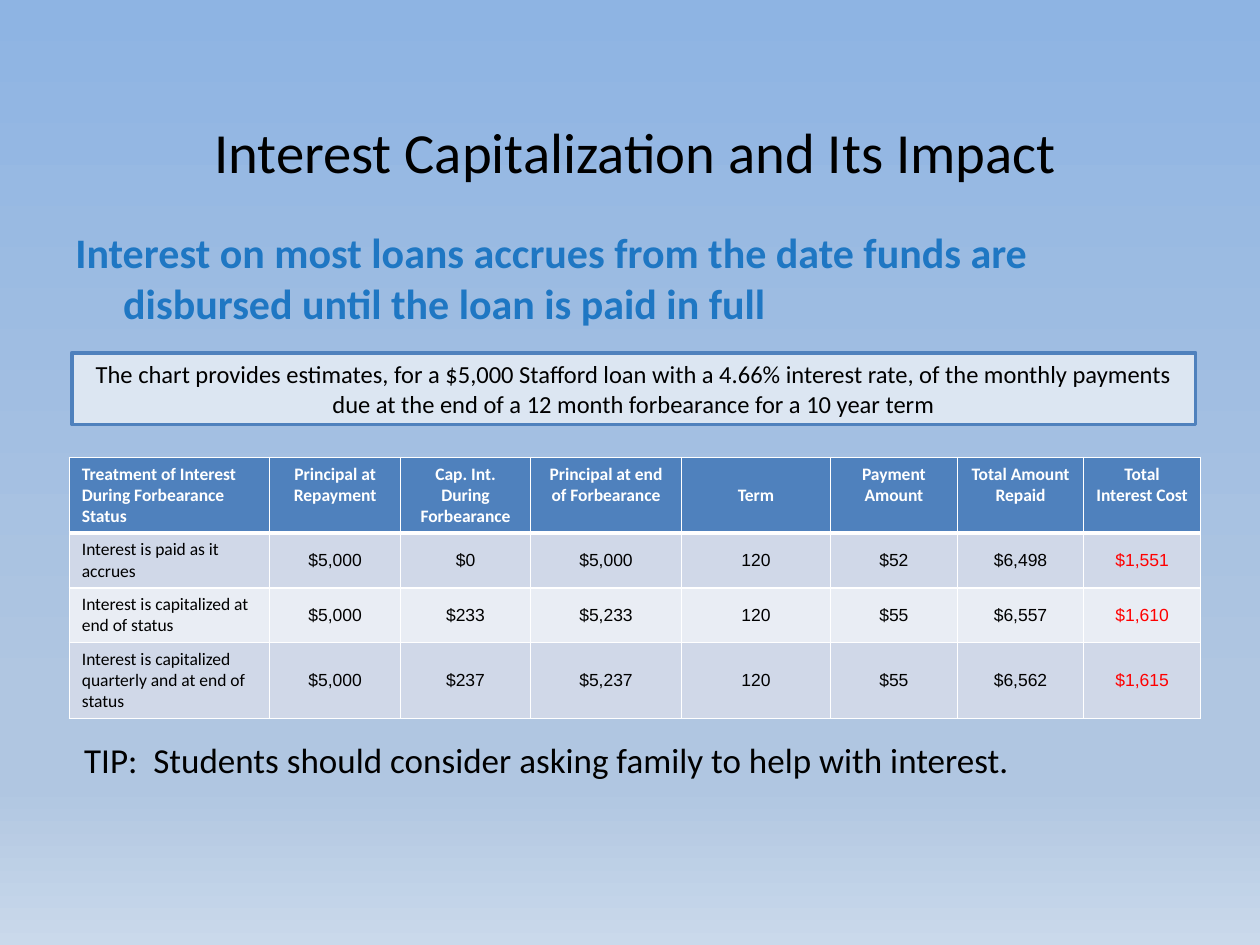
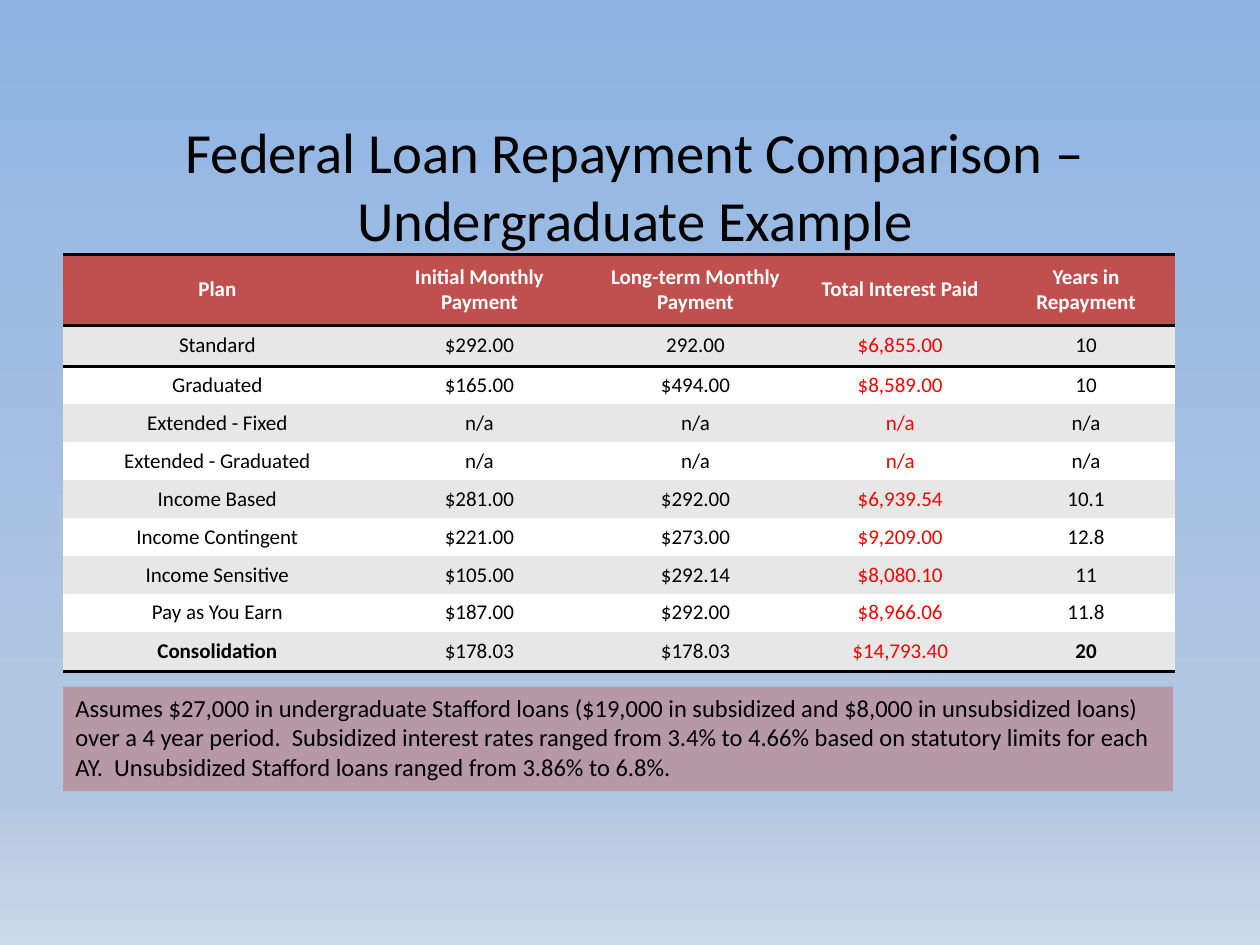
from lxml import etree
from pptx import Presentation
from pptx.dml.color import RGBColor
from pptx.enum.shapes import MSO_SHAPE
from pptx.enum.text import MSO_ANCHOR, PP_ALIGN
from pptx.oxml.ns import qn
from pptx.util import Emu, Inches, Pt

RECT = MSO_SHAPE.RECTANGLE
TOP, MID = MSO_ANCHOR.TOP, MSO_ANCHOR.MIDDLE
LEFT, MIDDLE = PP_ALIGN.LEFT, PP_ALIGN.CENTER
WIDE, HIGH = 10, 7.5
PLAIN = "{2D5ABB26-0587-4C30-8999-92F81FD0307C}"
BLACK, WHITE, RED = "000000", "FFFFFF", "FF0000"
BLUE, PALE, BRICK, HEAD = "4F81BD", "DCE6F2", "C0504D", "1F77C3"
SKY = [(0, "8EB4E3"), (74, "B0C6E1"), (83, "B0C6E1"), (100, "CAD9EB")]

IMPACT = dict(
    title="Interest Capitalization and Its Impact",
    lead="Interest on most loans accrues from the date funds are disbursed until the loan is paid in full",
    note="The chart provides estimates, for a $5,000 Stafford loan with a 4.66% interest rate, of the "
         "monthly payments due at the end of a 12 month forbearance for a 10 year term",
    tip="TIP:  Students should consider asking family to help with interest.",
    cols=[1.59, 1.04, 1.03, 1.2, 1.18, 1.01, 1, 0.93],
    rows=[0.59, 0.43, 0.43, 0.6],
    cells=[
        ["Treatment of Interest During Forbearance Status", "Principal at Repayment",
         "Cap. Int. During Forbearance", "Principal at end of Forbearance", "Term",
         "Payment Amount", "Total Amount Repaid", "Total Interest Cost"],
        ["Interest is paid as it accrues", "$5,000", "$0", "$5,000", "120", "$52", "$6,498", "$1,551"],
        ["Interest is capitalized at end of status",
         "$5,000", "$233", "$5,233", "120", "$55", "$6,557", "$1,610"],
        ["Interest is capitalized quarterly and at end of status",
         "$5,000", "$237", "$5,237", "120", "$55", "$6,562", "$1,615"],
    ],
)
PLANS = dict(
    title="Federal Loan Repayment Comparison – Undergraduate Example",
    note="Assumes $27,000 in undergraduate Stafford loans ($19,000 in subsidized and $8,000 in "
         "unsubsidized loans) over a 4 year period.  Subsidized interest rates ranged from 3.4% to 4.66% "
         "based on statutory limits for each AY.  Unsubsidized Stafford loans ranged from 3.86% to 6.8%.",
    cols=[2.45, 1.71, 1.72, 1.53, 1.42],
    rows=[0.56, 0.33] + [0.3] * 7 + [0.32],
    cells=[
        ["Plan", "Initial Monthly Payment", "Long-term Monthly Payment",
         "Total Interest Paid", "Years in Repayment"],
        ["Standard", "$292.00", "292.00", "$6,855.00", "10"],
        ["Graduated", "$165.00", "$494.00", "$8,589.00", "10"],
        ["Extended - Fixed", "n/a", "n/a", "n/a", "n/a"],
        ["Extended - Graduated", "n/a", "n/a", "n/a", "n/a"],
        ["Income Based", "$281.00", "$292.00", "$6,939.54", "10.1"],
        ["Income Contingent", "$221.00", "$273.00", "$9,209.00", "12.8"],
        ["Income Sensitive", "$105.00", "$292.14", "$8,080.10", "11"],
        ["Pay as You Earn", "$187.00", "$292.00", "$8,966.06", "11.8"],
        ["Consolidation", "$178.03", "$178.03", "$14,793.40", "20"],
    ],
)


def tint(text):
    return RGBColor.from_string(text)


def write(frame, text, size, color=BLACK, bold=False, align=LEFT, face="Calibri"):
    para = frame.paragraphs[0]
    para.text, para.alignment = text, align
    font = para.font
    font.name, font.size, font.bold = face, Pt(size), bold
    font.color.rgb = tint(color)
    return para


def label(slide, spot, text, size, anchor=TOP, **look):
    frame = slide.shapes.add_textbox(*map(Inches, spot)).text_frame
    frame.word_wrap, frame.vertical_anchor = True, anchor
    return write(frame, text, size, **look)


def panel(slide, spot, text, fill, line=None, alpha=None, anchor=TOP, align=LEFT):
    box = slide.shapes.add_shape(RECT, *map(Inches, spot))
    box.shadow.inherit = False
    box.fill.solid()
    box.fill.fore_color.rgb = tint(fill)
    if alpha:
        color = box.element.spPr.find(qn("a:solidFill"))[0]
        etree.SubElement(color, qn("a:alpha"), val=str(alpha * 1000))
    if line:
        box.line.color.rgb, box.line.width = tint(line), Pt(2)
    else:
        box.line.fill.background()
    box.text_frame.word_wrap, box.text_frame.vertical_anchor = True, anchor
    write(box.text_frame, text, 14, align=align)


def edge(cell, side, color, width):
    line = etree.SubElement(cell._tc.get_or_add_tcPr(), qn("a:ln" + side), w=str(Pt(width)))
    fill = etree.SubElement(line, qn("a:solidFill"))
    etree.SubElement(fill, qn("a:srgbClr"), val=color)


def grid(slide, left, top, data, style):
    cells, cols, rows = data["cells"], data["cols"], data["rows"]
    spot = map(Inches, (left, top, sum(cols), sum(rows)))
    frame = slide.shapes.add_table(len(rows), len(cols), *spot)
    table = frame.table
    table._tbl.tblPr.find(qn("a:tableStyleId")).text = PLAIN
    for col, width in zip(table.columns, cols):
        col.width = Inches(width)
    for r, (row, high) in enumerate(zip(table.rows, rows)):
        row.height = Inches(high)
        for c, cell in enumerate(row.cells):
            style(cell, r, c, cells[r][c])


def paint(cell, color):
    cell.fill.solid()
    cell.fill.fore_color.rgb = tint(color)


def impact(cell, r, c, text):
    for side in "LRTB":
        thick = (r, side) in ((0, "B"), (1, "T"))
        edge(cell, side, WHITE, 3 if thick else 1)
    paint(cell, BLUE if r == 0 else ("E9EDF4", "D0D8E8")[r % 2])
    value = r > 0 and c > 0
    if value:
        cell.margin_left = cell.margin_right = cell.margin_top = cell.margin_bottom = Emu(0)
    cell.vertical_anchor = MID if value or text == "Term" else TOP
    color = WHITE if r == 0 else RED if c == 7 else BLACK
    write(cell.text_frame, text, 10, color, r == 0, MIDDLE if c else LEFT,
          "Arial" if value else "Calibri")


def plans(cell, r, c, text):
    last = len(PLANS["rows"]) - 1
    if r < 2:
        edge(cell, "T", BLACK, 2)
    if r in (0, last):
        edge(cell, "B", BLACK, 2)
    paint(cell, BRICK if r == 0 else (WHITE, "E7E7E7")[r % 2])
    cell.vertical_anchor = MID
    color = WHITE if r == 0 else RED if c == 3 else BLACK
    bold = r == 0 or r == last and c in (0, 4)
    write(cell.text_frame, text, 12, color, bold, MIDDLE)


def start(deck, title, top):
    slide = deck.slides.add_slide(deck.slide_layouts[6])
    fill = slide.background.fill
    fill.gradient()
    fill.gradient_angle = 270
    stops = slide.element.find(".//" + qn("a:gsLst"))
    for stop in list(stops):
        stops.remove(stop)
    for place, color in SKY:
        stop = etree.SubElement(stops, qn("a:gs"), pos=str(place * 1000))
        etree.SubElement(stop, qn("a:srgbClr"), val=color)
    label(slide, (0.5, top, 9.08, 0.7), title, 32.4, MID, align=MIDDLE)
    return slide


def main():
    deck = Presentation()
    deck.slide_width, deck.slide_height = Inches(WIDE), Inches(HIGH)

    slide = start(deck, IMPACT["title"], 0.85)
    lead = label(slide, (0.5, 1.75, 9, 1), IMPACT["lead"], 24, color=HEAD, bold=True)
    hang = Inches(0.38)
    props = lead._p.get_or_add_pPr()
    props.set("marL", str(hang))
    props.set("indent", str(-hang))
    label(slide, (0.57, 5.81, 8.5, 0.75), IMPACT["tip"], 20)
    panel(slide, (0.57, 2.8, 8.92, 0.57), IMPACT["note"], PALE, BLUE, anchor=MID, align=MIDDLE)
    grid(slide, 0.55, 3.63, IMPACT, impact)

    slide = start(deck, PLANS["title"], 1.12)
    grid(slide, 0.5, 2.02, PLANS, plans)
    panel(slide, (0.5, 5.45, 8.81, 0.83), PLANS["note"], BRICK, alpha=39)

    deck.save("out.pptx")


if __name__ == "__main__":
    main()
